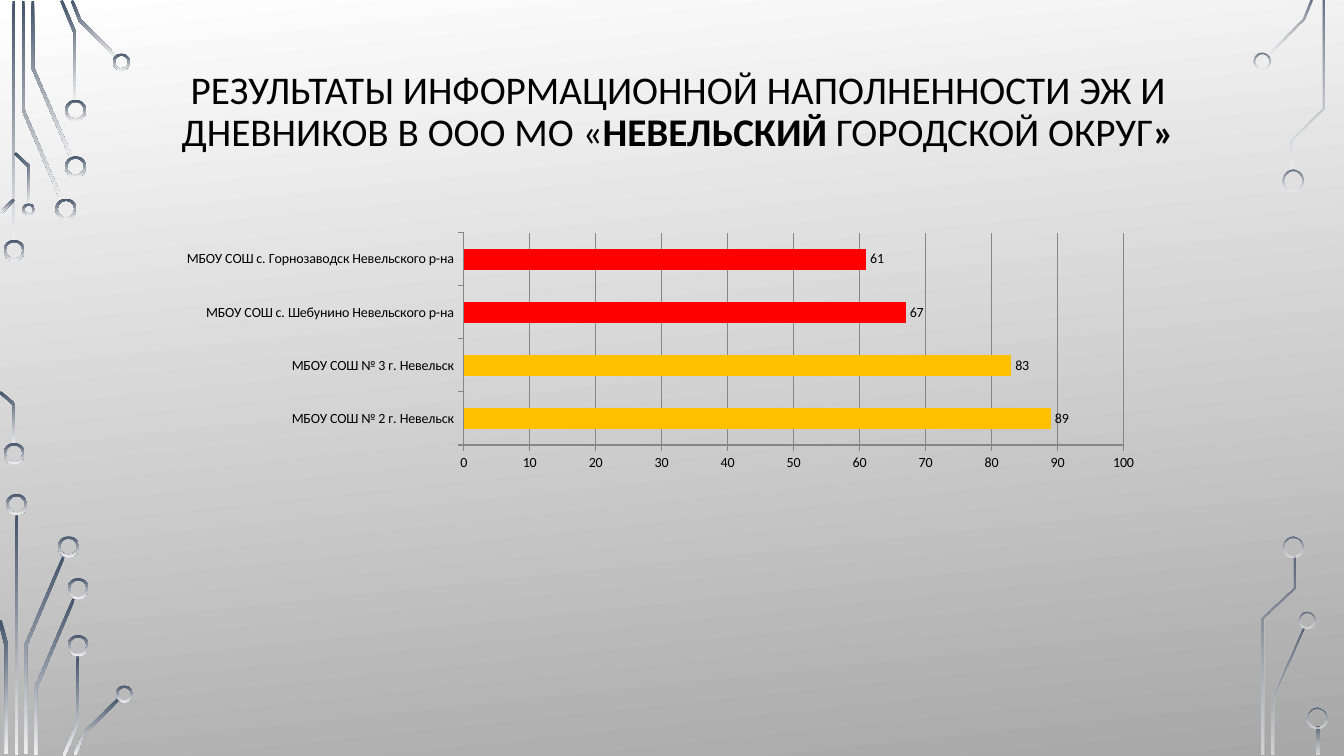
from dataclasses import dataclass
from math import hypot
from typing import Any

from lxml.etree import SubElement
from pptx import Presentation
from pptx.chart.data import CategoryChartData as ChartData
from pptx.dml.color import RGBColor as RGB
from pptx.enum.chart import XL_CHART_TYPE as Kind, XL_LABEL_POSITION as Spot, XL_TICK_MARK as Tick
from pptx.enum.shapes import MSO_SHAPE as Shape
from pptx.enum.text import MSO_ANCHOR as Anchor, PP_ALIGN as Align
from pptx.oxml.ns import qn
from pptx.util import Inches, Pt

Point = tuple[float, float]
CELL = Inches(0.1)  # one column or row of the grid
COLS, ROWS = 133.33, 75


@dataclass(frozen=True)
class Theme:
    font: str = "Calibri"
    title: Pt = Pt(28)
    small: Pt = Pt(10)
    hair: Pt = Pt(0.75)
    ink: RGB = RGB(0, 0, 0)
    grid: RGB = RGB(0x86, 0x86, 0x86)
    page: tuple = (RGB(0xFF, 0xFF, 0xFF), RGB(0xA7, 0xA7, 0xA7))
    wire: tuple = (RGB(0x44, 0x54, 0x6A), RGB(0xF1, 0xF0, 0xF0))
    good: RGB = RGB(0xFF, 0xC0, 0)
    poor: RGB = RGB(0xFF, 0, 0)


@dataclass(frozen=True)
class Wire:
    points: tuple[Point, ...]
    width: float = 0.27


@dataclass(frozen=True)
class Ring:
    x: float
    y: float
    size: float = 2.1
    rim: float = 0.21


@dataclass(frozen=True)
class Side:
    wires: tuple[Wire, ...]
    rings: tuple[Ring, ...]
    alphas: tuple[int, ...] = ()


@dataclass(frozen=True)
class School:
    name: str
    score: int
    color: RGB


THEME = Theme()
LEFT = Side(
    wires=(
        Wire(((1.35, 0.1), (1.35, 24))),
        Wire(((6.1, 19.85), (2.3, 10.9), (2.3, 0.1))),
        Wire(((7.1, 15.65), (3.25, 6.7), (3.25, 0.1))),
        Wire(((7.45, 10), (7.45, 3.3), (6.1, 0.05))),
        Wire(((11.55, 5.7), (7.95, 2.05), (7.15, 0.05))),
        Wire(((0.15, 21), (1.4, 19.8))),
        Wire(((1.4, 44.1), (1.4, 40.1), (0, 38.9))),
        Wire(((2.9, 20.3), (2.9, 16.55), (1.5, 15.2))),
        Wire(((1.65, 51), (1.65, 74.9))),
        Wire(((6.35, 55.15), (2.55, 64.05), (2.55, 74.8))),
        Wire(((0, 61.55), (0.65, 64.1), (0.65, 74.8)), 0.35),
        Wire(((7.35, 59.35), (3.55, 68.25), (3.55, 74.9))),
        Wire(((7.75, 65), (7.75, 71.7), (6.35, 74.95))),
        Wire(((11.8, 69.3), (8.25, 72.9), (7.45, 74.85))),
    ),
    rings=(
        Ring(1.4, 24.85), Ring(1.4, 45), Ring(6.55, 20.75), Ring(7.5, 16.55),
        Ring(7.5, 10.95), Ring(12.05, 6.15, 1.7), Ring(2.85, 20.8, 1.25),
        Ring(1.65, 50.05), Ring(6.8, 54.25), Ring(7.75, 58.4),
        Ring(7.75, 64.05), Ring(12.35, 68.85, 1.7),
    ),
)
RIGHT = Side(
    wires=(
        Wire(((125.7, 5.55), (129.25, 1.95), (130.05, 0.05))),
        Wire(((129.3, 62.35), (126.25, 69.35), (126.25, 74.9))),
        Wire(((128.2, 16.9), (128.2, 13.85), (131.25, 10.75), (131.25, 0.1))),
        Wire(((128.35, 55.2), (128.35, 58.35), (125.25, 61.35), (125.25, 74.9))),
        Wire(((130.75, 72.1), (130.75, 74.9))),
    ),
    rings=(
        Ring(125.2, 6.05, 1.7), Ring(128.25, 17.9), Ring(129.65, 61.55, 1.7),
        Ring(128.3, 54.25), Ring(130.65, 71.2),
    ),
    alphas=(80, 60),
)
SCHOOLS = (
    School("МБОУ СОШ № 2 г. Невельск", 89, THEME.good),
    School("МБОУ СОШ № 3 г. Невельск", 83, THEME.good),
    School("МБОУ СОШ с. Шебунино Невельского р-на", 67, THEME.poor),
    School("МБОУ СОШ с. Горнозаводск Невельского р-на", 61, THEME.poor),
)
TITLE = (
    ("РЕЗУЛЬТАТЫ ИНФОРМАЦИОННОЙ НАПОЛНЕННОСТИ ЭЖ И ДНЕВНИКОВ В ООО МО «", False),
    ("НЕВЕЛЬСКИЙ ", True),
    ("ГОРОДСКОЙ ОКРУГ", False),
    ("»", True),
)
PLOT = {"xMode": "edge", "yMode": "edge", "x": 0.3, "y": 0.02, "w": 0.67, "h": 0.86}


def cells(*counts: float) -> list[int]:
    return [round(n * CELL) for n in counts]


def style(target: Any, values: dict[str, Any]) -> None:
    for name, value in values.items():
        setattr(target, name, value)


def font(target: Any, size: Pt, **more: Any) -> None:
    style(target, {"name": THEME.font, "size": size, **more})
    target.color.rgb = THEME.ink


def fade(fill: Any, colors: tuple, angle: int, alphas: tuple[int, ...] = ()) -> None:
    """Fill with a two-stop gradient; the angle runs clockwise."""
    fill.gradient()
    fill.gradient_angle = 360 - angle
    for stop, color, place in zip(fill.gradient_stops, colors, (0, 1)):
        style(stop, {"position": place})
        stop.color.rgb = color
    for stop, alpha in zip(fill.gradient_stops, alphas):
        for color in stop._gs.iter(qn("a:srgbClr")):
            SubElement(color, qn("a:alpha"), val=str(alpha * 1000))


def edge(wire: Wire, sign: int) -> list[Point]:
    """Shift the centre line half a width to one side, with mitred corners."""
    pts = wire.points
    norms = []
    for (ax, ay), (bx, by) in zip(pts, pts[1:]):
        span = hypot(bx - ax, by - ay)
        norms.append(((ay - by) / span, (bx - ax) / span))
    half = sign * wire.width / 2
    out = []
    for (x, y), (ax, ay), (bx, by) in zip(pts, norms[:1] + norms, norms + norms[-1:]):
        reach = half / (1 + ax * bx + ay * by)
        out.append((x + (ax + bx) * reach, y + (ay + by) * reach))
    return out


def draw(shapes: Any, side: Side) -> None:
    parts = []
    for wire in side.wires:
        first, *rest = [cells(*p) for p in edge(wire, 1) + edge(wire, -1)[::-1]]
        form = shapes.build_freeform(*first)
        form.add_line_segments(rest, close=True)
        parts.append(form.convert_to_shape())
    for ring in side.rings:
        half = ring.size / 2
        box = cells(ring.x - half, ring.y - half, ring.size, ring.size)
        donut = shapes.add_shape(Shape.DONUT, *box)
        donut.adjustments[0] = ring.rim / ring.size
        parts.append(donut)
    for part in parts:
        part.shadow.inherit = False
        part.line.fill.background()
        fade(part.fill, THEME.wire, 90, side.alphas)


def head(shapes: Any) -> None:
    frame = shapes.add_textbox(*cells(13.1, 4.9, 108.3, 12.6)).text_frame
    style(frame, {"word_wrap": True, "vertical_anchor": Anchor.MIDDLE})
    para = frame.paragraphs[0]
    style(para, {"alignment": Align.CENTER, "line_spacing": 0.9})
    for text, bold in TITLE:
        run = para.add_run()
        run.text = text
        font(run.font, THEME.title, bold=bold)


def graph(shapes: Any) -> None:
    data = ChartData(number_format="#,##0")
    data.categories = [s.name for s in SCHOOLS]
    data.add_series("Series 1", [s.score for s in SCHOOLS])
    chart = shapes.add_chart(Kind.BAR_CLUSTERED, *cells(16.7, 22.6, 97.7, 24.5), data).chart
    style(chart, {"has_legend": False, "has_title": False})
    font(chart.font, THEME.small)
    plot = chart.plots[0]
    style(plot, {"gap_width": 150, "vary_by_categories": False, "has_data_labels": True})
    labels = plot.data_labels
    style(labels, {"show_value": True, "position": Spot.OUTSIDE_END,
                   "number_format": "#,##0", "number_format_is_linked": False})
    font(labels.font, THEME.small)
    bars = plot.series[0]
    for bar, color in [(bars, THEME.good)] + [
        (bars.points[i], s.color) for i, s in enumerate(SCHOOLS) if s.color != THEME.good
    ]:
        bar.format.fill.solid()
        bar.format.fill.fore_color.rgb = color
    names, values = chart.category_axis, chart.value_axis
    style(names, {"has_major_gridlines": False})
    style(values, {"has_major_gridlines": True, "minimum_scale": 0,
                   "maximum_scale": 100, "major_unit": 10})
    for axis in (names, values):
        style(axis, {"major_tick_mark": Tick.OUTSIDE, "minor_tick_mark": Tick.NONE})
        font(axis.tick_labels.font, THEME.small)
    for part in (names, values, values.major_gridlines):
        part.format.line.width = THEME.hair
        part.format.line.color.rgb = THEME.grid
    area = chart._chartSpace.chart.plotArea
    for old in area.findall(qn("c:layout")):
        area.remove(old)
    layout = SubElement(area, qn("c:layout"))
    area.insert(0, layout)
    manual = SubElement(layout, qn("c:manualLayout"))
    SubElement(manual, qn("c:layoutTarget"), val="inner")
    for name, value in PLOT.items():
        SubElement(manual, qn(f"c:{name}"), val=str(value))


def main() -> None:
    deck = Presentation()
    deck.slide_width, deck.slide_height = cells(COLS, ROWS)
    slide = deck.slides.add_slide(deck.slide_layouts[6])
    fade(slide.background.fill, THEME.page, 84)
    for side in (LEFT, RIGHT):
        draw(slide.shapes, side)
    head(slide.shapes)
    graph(slide.shapes)
    deck.save("out.pptx")


if __name__ == "__main__":
    main()
